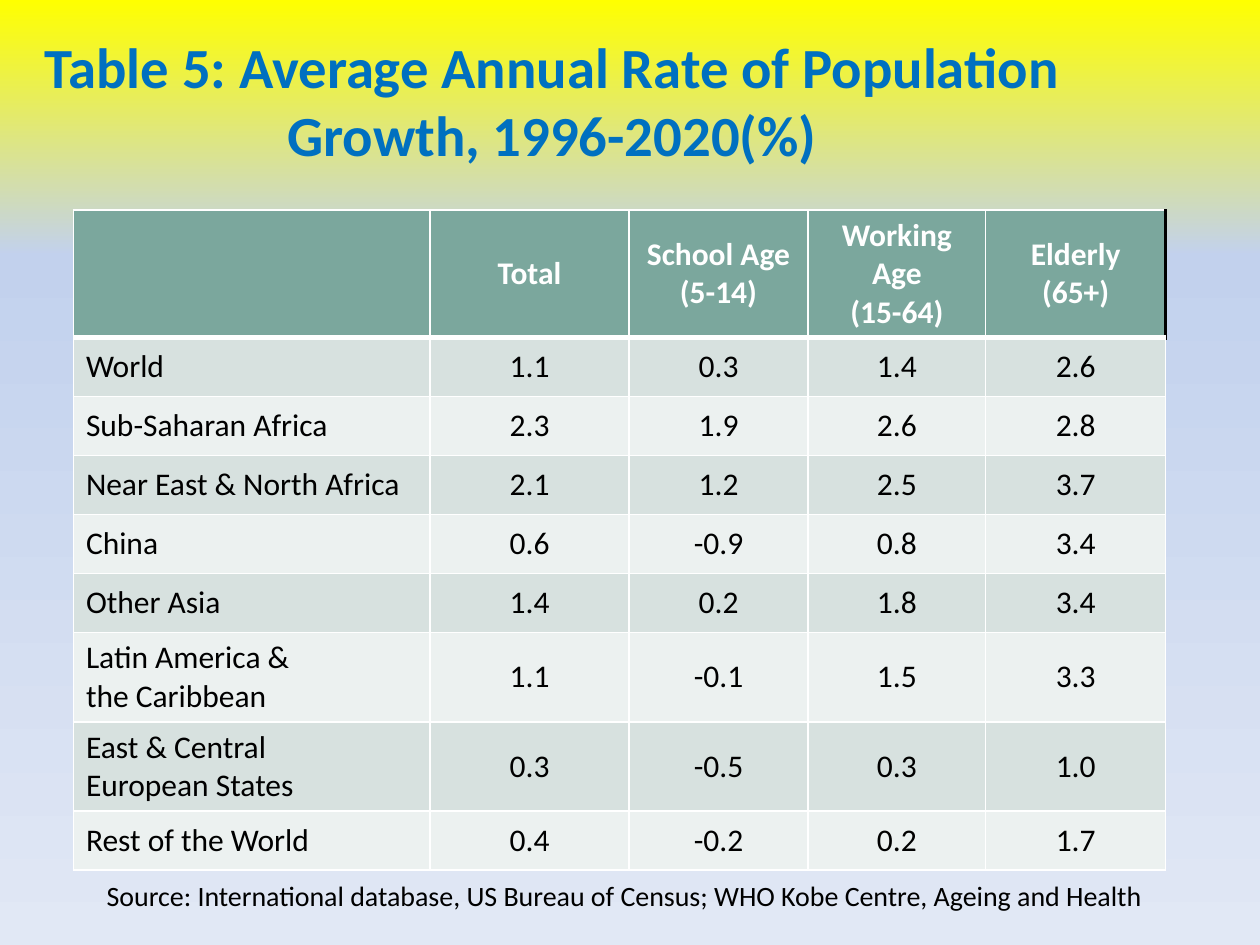
import pptx
import pptx.dml.color
import pptx.enum.text
import pptx.oxml.ns
import pptx.util
from lxml import etree

Cm, Pt = pptx.util.Cm, pptx.util.Pt
RGBColor = pptx.dml.color.RGBColor
ALIGN = pptx.enum.text.PP_ALIGN
ANCHOR = pptx.enum.text.MSO_ANCHOR
qn = pptx.oxml.ns.qn

BLACK = RGBColor(0x00, 0x00, 0x00)
WHITE = RGBColor(0xFF, 0xFF, 0xFF)
TITLE_BLUE = RGBColor(0x00, 0x70, 0xC0)
HEADER_GREEN = RGBColor(0x7B, 0xA7, 0x9D)
BAND_DARK = RGBColor(0xD7, 0xE1, 0xDF)
BAND_LIGHT = RGBColor(0xEC, 0xF1, 0xF0)
SKY = [(0, RGBColor(0xFF, 0xFF, 0x00)),
       (27, RGBColor(0xC2, 0xD1, 0xED)),
       (100, RGBColor(0xE1, 0xE8, 0xF5))]

FONT = "Calibri"
COLUMN_WIDTHS = [7.19, 4.01, 3.61, 3.58, 3.63]
HEADER_HEIGHT, LINE_HEIGHT, TWO_LINE_HEIGHT = 2.57, 1.19, 1.8

GROWTH = [
    ["", "Total", "School Age\n(5-14)", "Working Age\n(15-64)", "Elderly\n(65+)"],
    ["World", "1.1", "0.3", "1.4", "2.6"],
    ["Sub-Saharan Africa", "2.3", "1.9", "2.6", "2.8"],
    ["Near East & North Africa", "2.1", "1.2", "2.5", "3.7"],
    ["China", "0.6", "-0.9", "0.8", "3.4"],
    ["Other Asia", "1.4", "0.2", "1.8", "3.4"],
    ["Latin America &\nthe Caribbean", "1.1", "-0.1", "1.5", "3.3"],
    ["East & Central\nEuropean States", "0.3", "-0.5", "0.3", "1.0"],
    ["Rest of the World", "0.4", "-0.2", "0.2", "1.7"],
]


def add_solid_color(parent, color):
    etree.SubElement(parent, qn("a:srgbClr"), val=str(color))


def paint_background(page, stops):
    fill = page.background.fill
    fill.gradient()
    fill.gradient_angle = 270
    stop_list = next(page.element.iter(qn("a:gsLst")))
    stop_list.clear()
    for percent, color in stops:
        stop = etree.SubElement(stop_list, qn("a:gs"), pos=str(percent * 1000))
        add_solid_color(stop, color)


def write_text(frame, text, size, color, align, bold=False):
    frame.text = text
    for para in frame.paragraphs:
        para.alignment = align
        para.font.name = FONT
        para.font.size = Pt(size)
        para.font.bold = bold
        para.font.color.rgb = color


def add_text(page, left, top, width, height, text, size, color, align,
             bold=False, wrap=True, anchor=ANCHOR.TOP):
    box = page.shapes.add_textbox(Cm(left), Cm(top), Cm(width), Cm(height))
    frame = box.text_frame
    frame.word_wrap = wrap
    frame.vertical_anchor = anchor
    write_text(frame, text, size, color, align, bold)


def set_border(cell, side, color, width):
    properties = cell._tc.get_or_add_tcPr()
    line = etree.SubElement(properties, qn("a:ln" + side), w=str(Pt(width)))
    add_solid_color(etree.SubElement(line, qn("a:solidFill")), color)


def style_cell(cell, row, column, last_column):
    header = row == 0
    # Borders come before the fill in the cell properties
    set_border(cell, "L", WHITE, 1)
    if header and column == last_column:
        set_border(cell, "R", BLACK, 2.25)
    else:
        set_border(cell, "R", WHITE, 1)
    set_border(cell, "T", WHITE, 3 if row == 1 else 1)
    set_border(cell, "B", WHITE, 3 if header else 1)
    cell.fill.solid()
    bands = BAND_LIGHT, BAND_DARK
    cell.fill.fore_color.rgb = HEADER_GREEN if header else bands[row % 2]
    cell.vertical_anchor = ANCHOR.MIDDLE


def row_height(row, labels):
    if row == 0:
        return HEADER_HEIGHT
    return TWO_LINE_HEIGHT if "\n" in labels[0] else LINE_HEIGHT


def add_growth_table(page, left, top):
    heights = [row_height(row, labels) for row, labels in enumerate(GROWTH)]
    table = page.shapes.add_table(
        len(GROWTH), len(COLUMN_WIDTHS), Cm(left), Cm(top),
        Cm(sum(COLUMN_WIDTHS)), Cm(sum(heights))).table
    for column, width in zip(table.columns, COLUMN_WIDTHS):
        column.width = Cm(width)
    for row, labels in enumerate(GROWTH):
        table.rows[row].height = Cm(heights[row])
        for column, label in enumerate(labels):
            cell = table.cell(row, column)
            style_cell(cell, row, column, len(labels) - 1)
            header = row == 0
            align = ALIGN.CENTER if header or column else ALIGN.LEFT
            write_text(cell.text_frame, label, 18,
                       WHITE if header else BLACK, align, bold=header)


def main():
    deck = pptx.Presentation()
    deck.slide_width, deck.slide_height = Cm(25.4), Cm(19.05)
    page = deck.slides.add_slide(deck.slide_layouts[6])
    paint_background(page, SKY)

    # Title
    add_text(page, -0.2, 0.64, 22.66, 2.74,
             "Table 5: Average Annual Rate of Population Growth, 1996-2020(%)",
             32.4, TITLE_BLUE, ALIGN.CENTER, bold=True, anchor=ANCHOR.MIDDLE)

    # Growth rates by region and age group
    add_growth_table(page, 1.48, 4.23)

    # Source line
    add_text(page, 1.9, 17.58, 21.51, 0.94,
             "Source: International database, US Bureau of Census; "
             "WHO Kobe Centre, Ageing and Health",
             16, BLACK, ALIGN.LEFT, wrap=False)

    deck.save("out.pptx")


if __name__ == "__main__":
    main()
